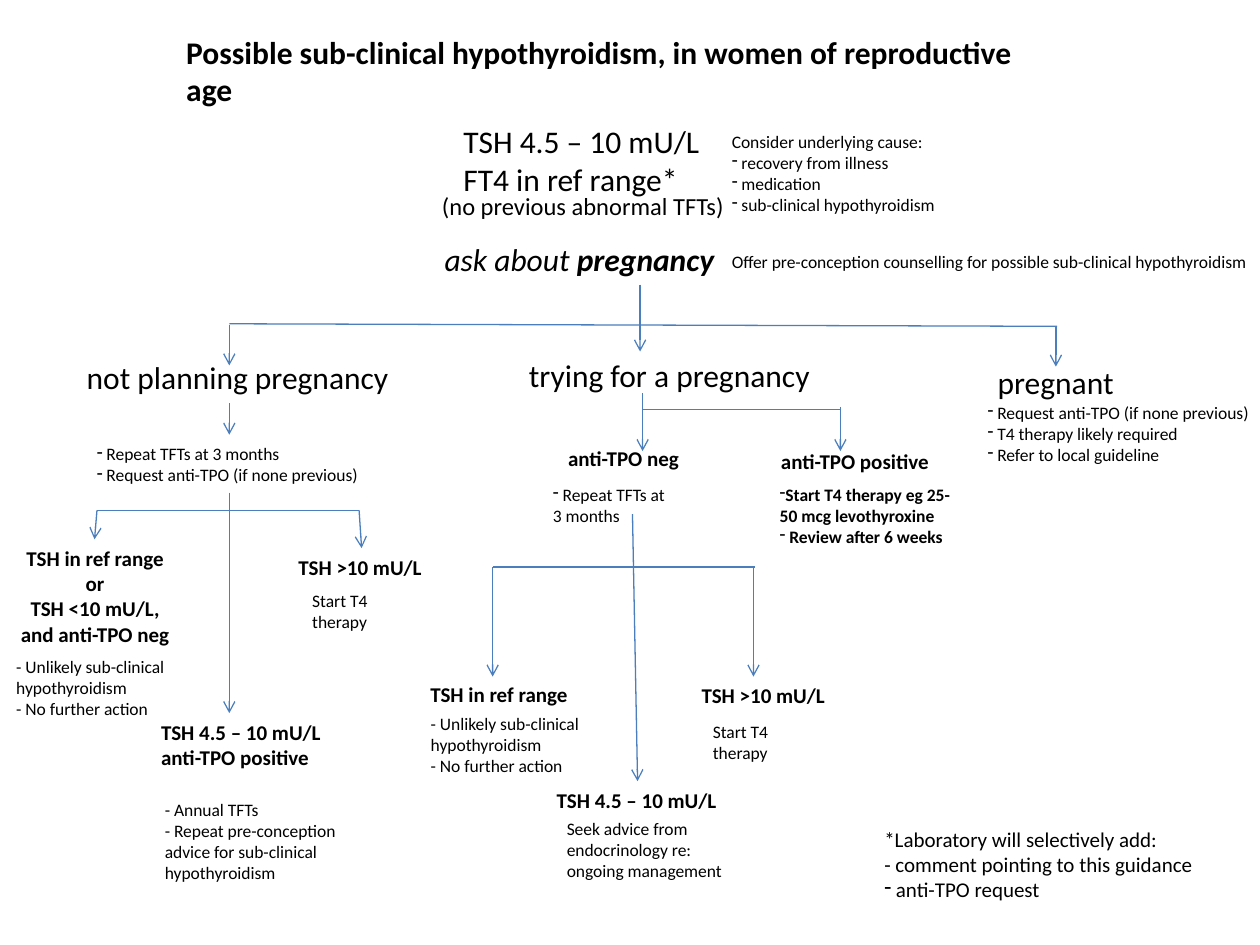
import pptx
import pptx.util
import pptx.dml.color
import pptx.enum.shapes
import pptx.enum.text
import pptx.oxml.ns
from lxml import etree

prs = pptx.Presentation()
prs.slide_width = pptx.util.Inches(10)
prs.slide_height = pptx.util.Inches(7.5)
slide = prs.slides.add_slide(prs.slide_layouts[6])

# Grid of 100 columns by 75 rows
COL = prs.slide_width / 100
ROW = prs.slide_height / 75
qn = pptx.oxml.ns.qn


def rgb(value):
    return pptx.dml.color.RGBColor.from_string(value)


# Wording used in more than one branch
unlikely = ["- Unlikely sub-clinical", "hypothyroidism", "- No further action"]
in_range, over_10, mid_range = "TSH in ref range", "TSH >10 mU/L", "TSH 4.5 – 10 mU/L"
start_t4 = "Start T4 therapy"

# Text: left, top, width, height, size, style, paragraphs
# Style: b bold, i italic, c centred, w wrapped
# "•" opens a dash-bulleted paragraph; runs after "|" are bold
texts = [
    # Title and entry criteria
    (13.8, 2.1, 71.7, 4, 18, "bw",
     ["Possible sub-clinical hypothyroidism, in women of reproductive age"]),
    (35.8, 9.2, 21, 7.1, 18, "", [mid_range, "FT4 in ref range*"]),
    (34.1, 14.7, 24.6, 3.4, 14, "", ["(no previous abnormal TFTs)"]),
    (57.1, 9.9, 18.3, 7.7, 10, "",
     ["Consider underlying cause:", "• recovery from illness", "• medication",
      "• sub-clinical hypothyroidism"]),
    (34.3, 18.6, 23.7, 4, 18, "i", ["ask about |pregnancy"]),
    (57.1, 19.4, 45.7, 2.7, 10, "w",
     ["Offer pre-conception counselling for possible sub-clinical hypothyroidism"]),
    # Not planning pregnancy
    (5.9, 27.9, 26.3, 4, 18, "", ["not planning pregnancy"]),
    (6.7, 34.7, 23, 4.4, 10, "",
     ["• Repeat TFTs at 3 months", "• Request anti-TPO (if none previous)"]),
    (-0.3, 42.8, 15.7, 9.1, 12, "bcw",
     [in_range, "or", "TSH <10 mU/L,", "and anti-TPO neg"]),
    (0.3, 51.6, 14.2, 6.1, 10, "w", unlikely),
    (11.8, 56.6, 14.9, 5, 12, "b", [mid_range, "anti-TPO positive"]),
    (12.1, 62.9, 17.3, 7.7, 10, "w",
     ["- Annual TFTs",
      "- Repeat pre-conception advice for sub-clinical hypothyroidism"]),
    (22.7, 43.5, 12, 3, 12, "b", [over_10]),
    (23.8, 46.3, 9.4, 4.4, 10, "w", [start_t4]),
    # Trying for a pregnancy
    (41, 27.8, 24.6, 4, 18, "", ["trying for a pregnancy"]),
    (44.1, 34.9, 11.1, 3, 12, "b", ["anti-TPO neg"]),
    (42.9, 37.9, 11.8, 4.4, 10, "w", ["• Repeat TFTs at 3 months"]),
    (61, 35.1, 14, 3, 12, "b", ["anti-TPO positive"]),
    (60.9, 37.9, 15.7, 6.1, 10, "bw",
     ["•Start T4 therapy eg 25-50 mcg levothyroxine", "• Review after 6 weeks"]),
    (32.5, 53.6, 14.2, 3, 12, "bcw", [in_range]),
    (33.2, 56.1, 14.2, 6.1, 10, "w", unlikely),
    (43.2, 62, 14.9, 3, 12, "b", [mid_range]),
    (44, 64.4, 15.7, 6.1, 10, "w",
     ["Seek advice from endocrinology re: ongoing management"]),
    (54.7, 53.7, 12, 3, 12, "b", [over_10]),
    (55.6, 56.7, 9.4, 4.4, 10, "w", [start_t4]),
    # Pregnant
    (78.2, 28.3, 11.3, 4, 18, "", ["pregnant"]),
    (77.4, 31.4, 23, 6.1, 10, "",
     ["• Request anti-TPO (if none previous)", "• T4 therapy likely required",
      "• Refer to local guideline"]),
    # Footnote
    (69.2, 65.1, 26.7, 9.1, 12, "",
     ["*Laboratory will selectively add:", "- comment pointing to this guidance",
      "• anti-TPO request"]),
]

for left, top, width, height, size, style, lines in texts:
    sp = slide.shapes.add_textbox(int(left * COL), int(top * ROW),
                                  int(width * COL), int(height * ROW))
    tf = sp.text_frame
    tf.word_wrap = "w" in style
    tf.auto_size = pptx.enum.text.MSO_AUTO_SIZE.SHAPE_TO_FIT_TEXT
    for n, line in enumerate(lines):
        p = tf.add_paragraph() if n else tf.paragraphs[0]
        if "c" in style:
            p.alignment = pptx.enum.text.PP_ALIGN.CENTER
        if line.startswith("•"):
            pPr = p._p.get_or_add_pPr()
            etree.SubElement(pPr, qn("a:buFontTx"))
            etree.SubElement(pPr, qn("a:buChar")).set("char", "-")
        for k, part in enumerate(line.removeprefix("•").split("|")):
            r = p.add_run()
            r.text = part
            r.font.name = "Calibri"
            r.font.size = pptx.util.Pt(size)
            r.font.bold = "b" in style or k > 0
            r.font.italic = "i" in style
            r.font.color.rgb = rgb("000000")

# Plain branch bars: x1, y1, x2, y2
bars = [
    (18.2, 25.7, 83.9, 25.9),
    (7.7, 40.5, 28.5, 40.5),
    (39.1, 45, 59.9, 45),
    (51, 32.5, 66.7, 32.5),
]
# Arrows down to the next step: x1, y1, x2, y2
arrows = [
    (50.8, 22.6, 50.8, 27.9),
    (18.2, 25.8, 18.2, 29),
    (83.8, 25.9, 83.8, 29.1),
    (18.2, 32, 18.2, 34.5),
    (18.2, 39.1, 18.2, 56.6),
    (7.7, 40.5, 7.5, 42.8),
    (28.5, 40.5, 28.7, 43.5),
    (50.2, 40.8, 50.6, 62),
    (39.1, 45, 39.1, 53.7),
    (59.8, 45, 59.8, 53.7),
    (51, 31.2, 51, 35.8),
    (66.7, 32.3, 66.7, 35.8),
]

for n, (x1, y1, x2, y2) in enumerate(bars + arrows):
    line = slide.shapes.add_connector(
        pptx.enum.shapes.MSO_CONNECTOR.STRAIGHT,
        int(x1 * COL), int(y1 * ROW), int(x2 * COL), int(y2 * ROW))
    line.line.color.rgb = rgb("4B7EBC")
    line.line.width = pptx.util.Pt(0.75)
    if n >= len(bars):
        etree.SubElement(line.line._get_or_add_ln(), qn("a:tailEnd")).set("type", "arrow")
    etree.SubElement(line._element.spPr, qn("a:effectLst"))

prs.save("out.pptx")
